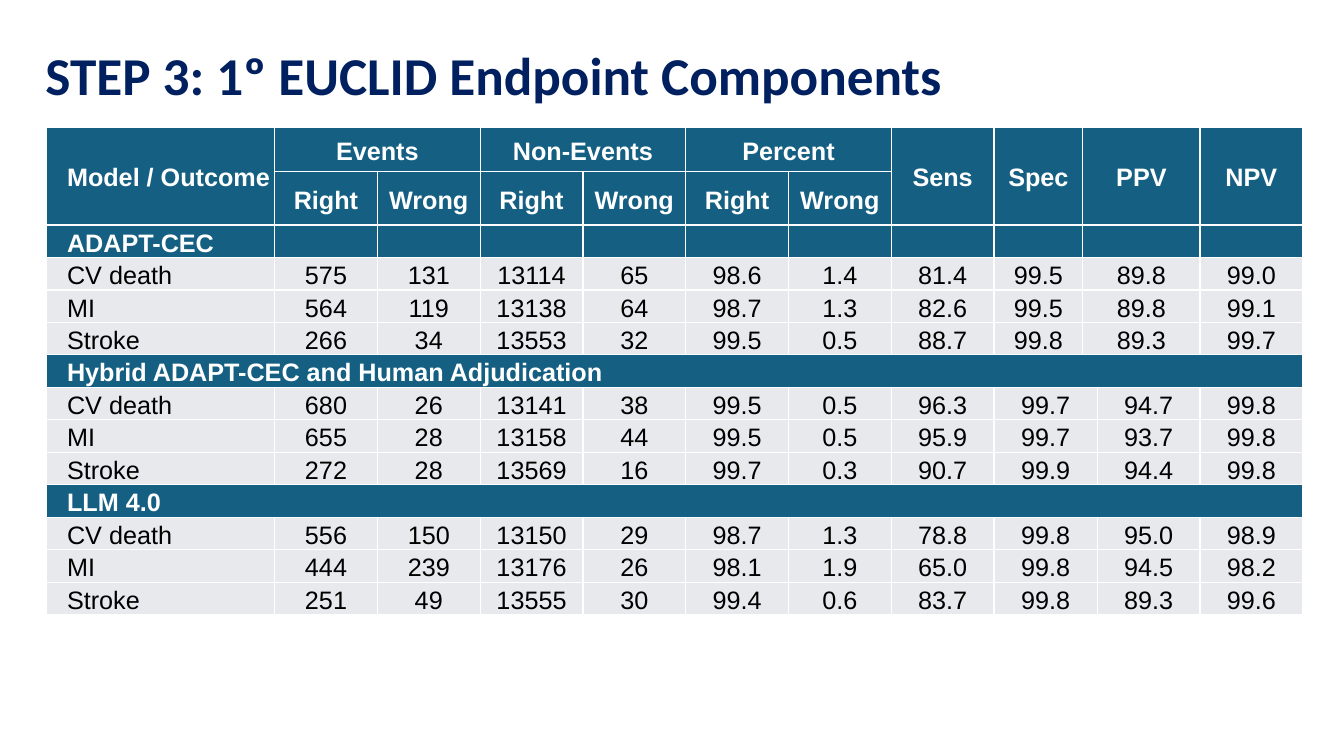
import dataclasses

import lxml.etree
import pptx
import pptx.dml.color
import pptx.enum.text
import pptx.oxml.ns
import pptx.util

Cm = pptx.util.Cm
Align = pptx.enum.text.PP_ALIGN
Anchor = pptx.enum.text.MSO_ANCHOR


@dataclasses.dataclass(frozen=True)
class Theme:
    navy: str = "002060"
    teal: str = "156082"
    pale: str = "E7E9EC"
    white: str = "FFFFFF"
    black: str = "000000"
    head: str = "Calibri"
    body: str = "Arial"
    large: int = 38
    small: int = 18
    rule: int = 1


theme = Theme()

WIDTHS = [5.74] + [2.59] * 7 + [2.24, 0.36, 2.59, 2.59]
TOPS = [1.12, 1.35]
LINE = 0.64

GROUPS = ["Events", "Non-Events", "Percent"]
SCORES = [(7, 7, "Sens"), (8, 8, "Spec"), (9, 10, "PPV"), (11, 11, "NPV")]

MODELS = [
    ("ADAPT-CEC", [
        ("CV death", "575 131 13114 65 98.6 1.4 81.4 99.5 89.8 99.0"),
        ("MI", "564 119 13138 64 98.7 1.3 82.6 99.5 89.8 99.1"),
        ("Stroke", "266 34 13553 32 99.5 0.5 88.7 99.8 89.3 99.7"),
    ]),
    ("Hybrid ADAPT-CEC and Human Adjudication", [
        ("CV death", "680 26 13141 38 99.5 0.5 96.3 99.7 94.7 99.8"),
        ("MI", "655 28 13158 44 99.5 0.5 95.9 99.7 93.7 99.8"),
        ("Stroke", "272 28 13569 16 99.7 0.3 90.7 99.9 94.4 99.8"),
    ]),
    ("LLM 4.0", [
        ("CV death", "556 150 13150 29 98.7 1.3 78.8 99.8 95.0 98.9"),
        ("MI", "444 239 13176 26 98.1 1.9 65.0 99.8 94.5 98.2"),
        ("Stroke", "251 49 13555 30 99.4 0.6 83.7 99.8 89.3 99.6"),
    ]),
]


def paint(color):
    return pptx.dml.color.RGBColor.from_string(color)


def style(para, font, size, color, bold):
    for run in para.runs:
        run.font.name = font
        run.font.size = pptx.util.Pt(size)
        run.font.bold = bold
        run.font.color.rgb = paint(color)


def border(cell):
    props = cell._tc.get_or_add_tcPr()
    qn = pptx.oxml.ns.qn
    for spot, side in enumerate(["a:lnL", "a:lnR", "a:lnT", "a:lnB"]):
        line = lxml.etree.Element(qn(side), w=str(pptx.util.Pt(theme.rule)))
        fill = lxml.etree.SubElement(line, qn("a:solidFill"))
        lxml.etree.SubElement(fill, qn("a:srgbClr"), val=theme.white)
        props.insert(spot, line)


def shade(cell, color, left):
    cell.fill.solid()
    cell.fill.fore_color.rgb = paint(color)
    cell.margin_left = Cm(0.51 if left else 0.03)
    cell.margin_right = Cm(0.03)
    cell.margin_top = cell.margin_bottom = 0
    border(cell)


def write(cell, text, dark, left=False, anchor=Anchor.MIDDLE):
    cell.text_frame.text = text
    cell.vertical_anchor = anchor
    para = cell.text_frame.paragraphs[0]
    para.alignment = Align.LEFT if left else Align.CENTER
    para.line_spacing = 1.15
    style(para, theme.body, theme.small, theme.white if dark else theme.black, dark)


def header(table):
    table.cell(0, 0).merge(table.cell(1, 0))
    write(table.cell(0, 0), "Model / Outcome", True, True)
    for index, group in enumerate(GROUPS):
        col = 1 + 2 * index
        table.cell(0, col).merge(table.cell(0, col + 1))
        write(table.cell(0, col), group, True)
        for step, label in enumerate(["Right", "Wrong"]):
            write(table.cell(1, col + step), label, True)
    for first, last, label in SCORES:
        table.cell(0, first).merge(table.cell(1, last))
        write(table.cell(0, first), label, True)


def block(table, top, name, rows, split):
    if split == 9:
        table.cell(top, 9).merge(table.cell(top, 10))
    else:
        table.cell(top, 0).merge(table.cell(top, len(WIDTHS) - 1))
    write(table.cell(top, 0), name, True, True, Anchor.TOP)
    cols = [col for col in range(1, len(WIDTHS)) if col != split + 1]
    for row, (label, values) in enumerate(rows, top + 1):
        table.cell(row, split).merge(table.cell(row, split + 1))
        write(table.cell(row, 0), label, False, True, Anchor.TOP)
        for col, value in zip(cols, values.split()):
            write(table.cell(row, col), value, False)


def results(slide, left, top, width):
    tall = TOPS + [LINE] * sum(1 + len(rows) for name, rows in MODELS)
    frame = slide.shapes.add_table(
        len(tall), len(WIDTHS), Cm(left), Cm(top), Cm(width), Cm(sum(tall)))
    table = frame.table
    table.first_row = table.horz_banding = False
    for col, share in zip(table.columns, WIDTHS):
        col.width = Cm(width * share / sum(WIDTHS))
    for row, high in zip(table.rows, tall):
        row.height = Cm(high)
    bands = {0, 1} | {2 + 4 * index for index in range(len(MODELS))}
    for row in range(len(tall)):
        for col in range(len(WIDTHS)):
            color = theme.teal if row in bands else theme.pale
            shade(table.cell(row, col), color, col == 0)
    header(table)
    for index, (name, rows) in enumerate(MODELS):
        block(table, 2 + 4 * index, name, rows, 8 if index else 9)


def heading(slide, left, top, width, height):
    title = slide.shapes.title
    title.left, title.top = Cm(left), Cm(top)
    title.width, title.height = Cm(width), Cm(height)
    frame = title.text_frame
    frame.text = "STEP 3: 1º EUCLID Endpoint Components"
    frame.auto_size = pptx.enum.text.MSO_AUTO_SIZE.NONE
    frame.vertical_anchor = Anchor.MIDDLE
    para = frame.paragraphs[0]
    para.alignment = Align.LEFT
    para.line_spacing = 0.9
    style(para, theme.head, theme.large, theme.navy, True)


def main():
    deck = pptx.Presentation()
    deck.slide_width, deck.slide_height = Cm(33.87), Cm(19.05)
    slide = deck.slides.add_slide(deck.slide_layouts[5])
    heading(slide, 0.89, 0.81, 27.97, 2.34)
    results(slide, 1.18, 3.2, 31.65)
    deck.save("out.pptx")


if __name__ == "__main__":
    main()
